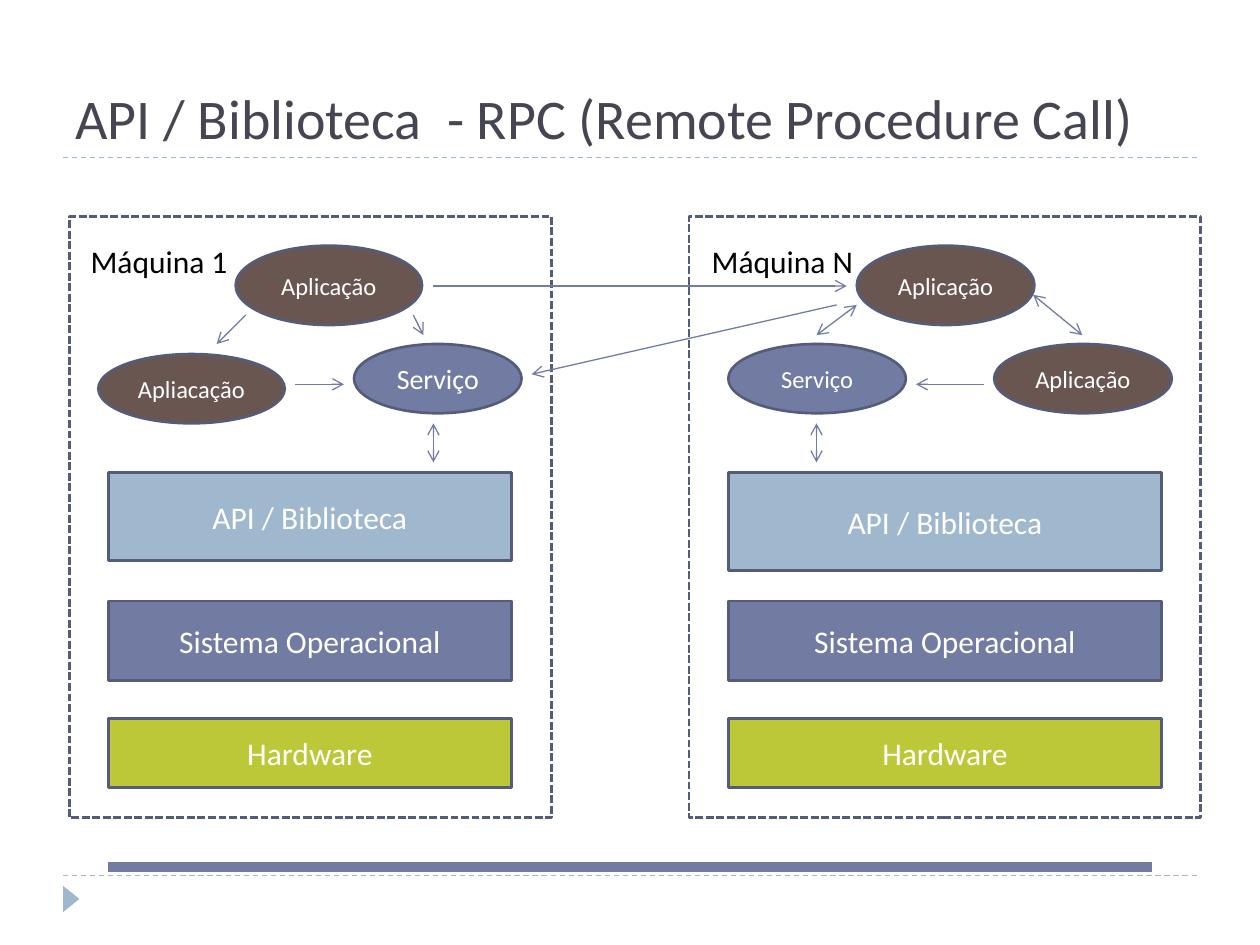
from dataclasses import dataclass

from lxml.etree import SubElement
from pptx import Presentation
from pptx.dml.color import RGBColor
from pptx.enum.dml import MSO_LINE as Dash
from pptx.enum.shapes import MSO_CONNECTOR as Conn, MSO_SHAPE as Kind
from pptx.enum.text import MSO_ANCHOR as Anchor, MSO_AUTO_SIZE as Fit, PP_ALIGN as Align
from pptx.oxml.ns import qn
from pptx.util import Inches, Pt

HEX = {
    "white": "FFFFFF", "black": "000000", "title": "464653", "edge": "545C79",
    "blue": "727CA3", "sky": "9FB8CD", "brown": "6A5650", "green": "BCC838",
}


@dataclass
class Oval:
    text: str
    left: float
    top: float
    width: float
    height: float
    fill: str = "brown"
    size: int = 14


@dataclass
class Arrow:
    x1: float
    y1: float
    x2: float
    y2: float
    both: bool = False


@dataclass
class Host:
    name: str
    left: float
    width: float
    label: tuple[float, float]  # left, width
    stack: tuple[float, float]  # left, width
    api: float  # height of the API layer
    ovals: list[Oval]


HOSTS = [
    Host("Máquina 1", 0.55, 3.83, (0.62, 1.48), (0.86, 3.2), 0.7, [
        Oval("Aplicação", 1.87, 1.95, 1.48, 0.63),
        Oval("Apliacação", 0.78, 2.81, 1.48, 0.55),
        Oval("Serviço", 2.81, 2.73, 1.33, 0.55, "blue", 16),
    ]),
    Host("Máquina N", 5.47, 4.06, (5.55, 1.33), (5.78, 3.44), 0.78, [
        Oval("Aplicação", 6.8, 1.95, 1.41, 0.63),
        Oval("Serviço", 5.78, 2.73, 1.41, 0.55, "blue"),
        Oval("Aplicação", 7.89, 2.73, 1.41, 0.55),
    ]),
]

ARROWS = [
    # Inside machine 1
    Arrow(1.95, 2.5, 1.72, 2.73),
    Arrow(2.34, 3.05, 2.73, 3.05),
    Arrow(3.28, 2.5, 3.36, 2.66),
    Arrow(3.44, 3.36, 3.44, 3.67, True),
    # Between the machines
    Arrow(3.44, 2.27, 6.72, 2.27),
    Arrow(6.64, 2.42, 4.22, 2.97),
    # Inside machine N
    Arrow(6.48, 2.66, 6.8, 2.42, True),
    Arrow(8.2, 2.34, 8.59, 2.66, True),
    Arrow(7.81, 3.05, 7.27, 3.05),
    Arrow(6.48, 3.36, 6.48, 3.67, True),
]


def color(name: str) -> RGBColor:
    return RGBColor.from_string(HEX[name])


def write(shape, text: str, size=18, ink="white", align=Align.CENTER, anchor=Anchor.MIDDLE):
    frame = shape.text_frame
    frame.text = text
    frame.word_wrap = True
    frame.auto_size = Fit.NONE
    frame.vertical_anchor = anchor
    para = frame.paragraphs[0]
    para.alignment = align
    font = para.runs[0].font
    font.name, font.size = "Calibri", Pt(size)
    font.color.rgb = color(ink)


def block(slide, kind, box: tuple, fill: str, edge: str | None = "edge", dash=None):
    shape = slide.shapes.add_shape(kind, *map(Inches, box))
    shape.shadow.inherit = False
    shape.fill.solid()
    shape.fill.fore_color.rgb = color(fill)
    if edge is None:
        shape.line.fill.background()
    else:
        shape.line.color.rgb = color(edge)
        shape.line.width = Pt(1.5)
    if dash:
        shape.line.dash_style = dash
    return shape


def rule(slide, ends: tuple, ink="blue", width=0.75, dash=None):
    line = slide.shapes.add_connector(Conn.STRAIGHT, *map(Inches, ends))
    line.line.color.rgb = color(ink)
    line.line.width = Pt(width)
    if dash:
        line.line.dash_style = dash
    SubElement(line._element.spPr, qn("a:effectLst"))
    return line


def point(slide, arrow: Arrow) -> None:
    line = rule(slide, (arrow.x1, arrow.y1, arrow.x2, arrow.y2))
    stroke = line.line._get_or_add_ln()
    for tag in ["a:headEnd", "a:tailEnd"] if arrow.both else ["a:tailEnd"]:
        SubElement(stroke, qn(tag), type="arrow")


def draw(slide, host: Host) -> None:
    block(slide, Kind.RECTANGLE, (host.left, 1.72, host.width, 4.77), "white",
          dash=Dash.SQUARE_DOT)
    # Layers of the stack
    left, width = host.stack
    for text, top, height, fill in [
        ("API / Biblioteca", 3.75, host.api, "sky"),
        ("Sistema Operacional", 4.77, 0.63, "blue"),
        ("Hardware", 5.7, 0.55, "green"),
    ]:
        write(block(slide, Kind.RECTANGLE, (left, top, width, height), fill), text)
    # Programs
    for oval in host.ovals:
        box = (oval.left, oval.top, oval.width, oval.height)
        write(block(slide, Kind.OVAL, box, oval.fill), oval.text, size=oval.size)
    # Machine name
    left, width = host.label
    label = slide.shapes.add_textbox(*map(Inches, (left, 1.87, width, 0.4)))
    write(label, host.name, ink="black", align=Align.LEFT, anchor=Anchor.TOP)
    label.text_frame.margin_right = 0


def main() -> None:
    deck = Presentation()
    deck.slide_width, deck.slide_height = Inches(10), Inches(7.5)
    slide = deck.slides.add_slide(deck.slide_layouts[5])

    # Frame of the page
    for y in (1.25, 6.95):
        rule(slide, (0.5, y, 9.5, y), ink="sky", dash=Dash.DASH)
    mark = block(slide, Kind.ISOSCELES_TRIANGLE, (0.46, 7.07, 0.21, 0.13), "sky", edge=None)
    mark.rotation = 90
    rule(slide, (0.86, 6.88, 9.14, 6.88), width=6)

    # Title
    title = slide.shapes.title
    title.left, title.top, title.width, title.height = map(Inches, (0.5, 0.17, 9, 1.08))
    write(title, "API / Biblioteca  - RPC (Remote Procedure Call)", size=32,
          ink="title", align=Align.LEFT, anchor=Anchor.BOTTOM)

    # Machines and their calls
    for host in HOSTS:
        draw(slide, host)
    for arrow in ARROWS:
        point(slide, arrow)

    deck.save("out.pptx")


if __name__ == "__main__":
    main()
